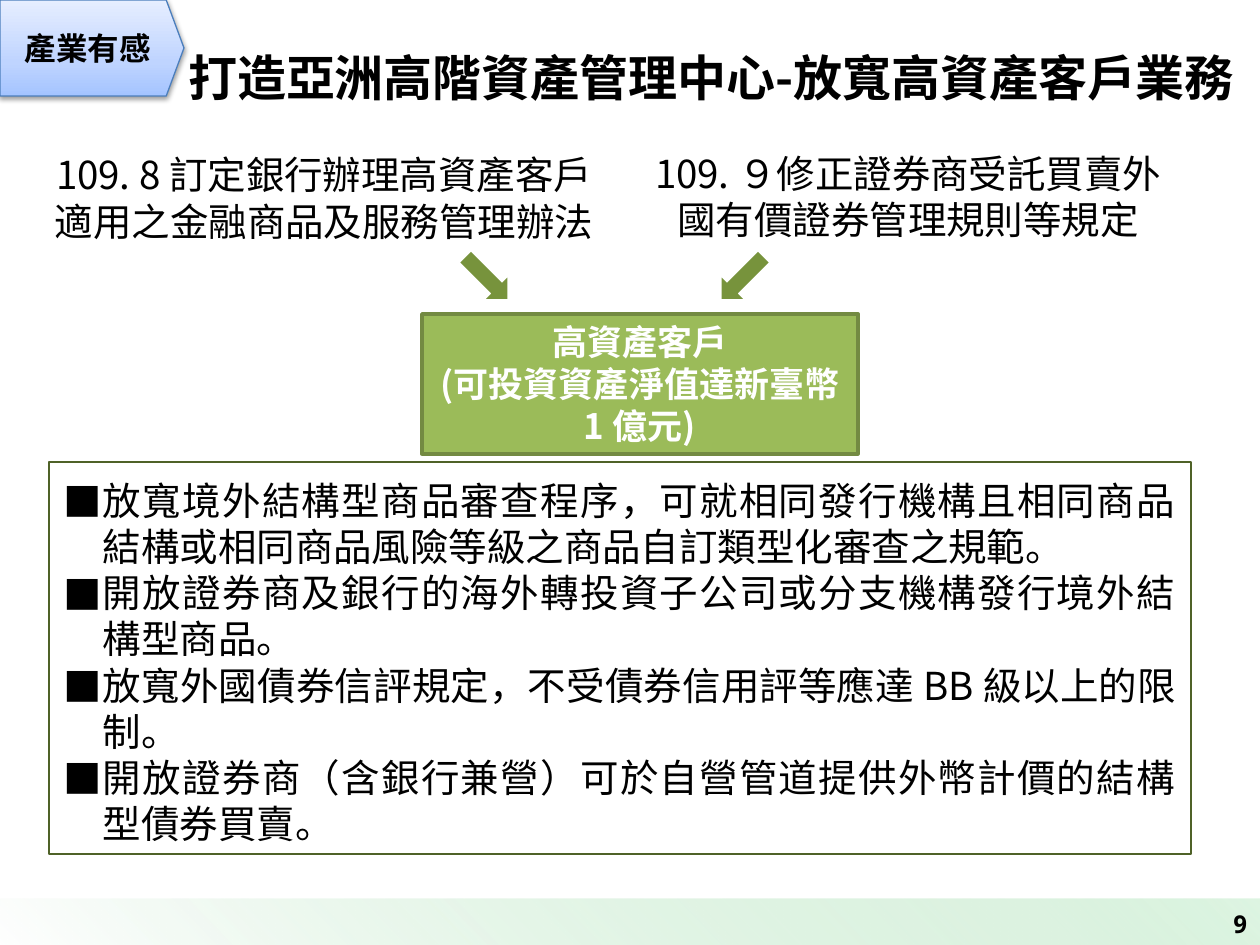
import dataclasses

import lxml.etree
import pptx
import pptx.dml.color
import pptx.enum.shapes
import pptx.enum.text
import pptx.oxml.ns
import pptx.util

SCALE = 914400 / 126
SHAPES = pptx.enum.shapes.MSO_SHAPE
ALIGN = pptx.enum.text.PP_ALIGN
ANCHOR = pptx.enum.text.MSO_ANCHOR


@dataclasses.dataclass(frozen=True)
class Theme:
    """Colours, fonts and type sizes of the deck."""
    sans: str = "Noto Sans CJK SC"
    mono: str = "Noto Sans Mono"
    ink: str = "000000"
    paper: str = "FFFFFF"
    green: str = "9BBB59"
    green_edge: str = "738A42"
    arrow: str = "77933C"
    panel_edge: str = "4F6228"
    tag_edge: str = "4B7EBC"
    tag_stops: tuple = ((0, "A4C4FF", 100), (35, "BFD4FF", 100), (100, "E6EEFF", 100))
    footer_stops: tuple = ((0, "91DEA0", 30), (18, "BDE8C5", 51), (100, "FFFFFF", 100))
    title: int = 28
    body: int = 22
    client: int = 20
    tag: int = 18
    number: int = 14


THEME = Theme()


def px(length):
    """Turn px into EMU."""
    return round(length * SCALE)


def rgb(code):
    """Return a colour from its hex code."""
    return pptx.dml.color.RGBColor.from_string(code)


def add_node(parent, tag, **values):
    """Append a drawing element with the given attributes."""
    node = lxml.etree.SubElement(parent, pptx.oxml.ns.qn(tag))
    for name, value in values.items():
        node.set(name, str(value))
    return node


def add_colour(parent, code, opacity):
    """Append a colour with an opacity in percent."""
    colour = add_node(parent, "a:srgbClr", val=code)
    if opacity < 100:
        add_node(colour, "a:alpha", val=opacity * 1000)


def set_gradient(shape, stops, angle):
    """Fill a shape with a linear gradient."""
    shape.fill.gradient()
    gradient = shape._element.spPr.find(pptx.oxml.ns.qn("a:gradFill"))
    for child in list(gradient):
        gradient.remove(child)
    stop_list = add_node(gradient, "a:gsLst")
    for position, code, opacity in stops:
        add_colour(add_node(stop_list, "a:gs", pos=position * 1000), code, opacity)
    add_node(gradient, "a:lin", ang=angle * 60000, scaled=0)


def add_block(page, box, kind=SHAPES.RECTANGLE, fill=None, edge=None, width=1):
    """Add a shape without shadow, with optional plain fill and outline."""
    shape = page.shapes.add_shape(kind, *map(px, box))
    shape.shadow.inherit = False
    if fill:
        shape.fill.solid()
        shape.fill.fore_color.rgb = rgb(fill)
    if edge:
        shape.line.color.rgb = rgb(edge)
        shape.line.width = pptx.util.Pt(width)
    else:
        shape.line.fill.background()
    return shape


def add_bullet(para, indent):
    """Give a paragraph a square bullet with a hanging indent."""
    settings = para._p.get_or_add_pPr()
    settings.set("marL", str(px(indent)))
    settings.set("indent", str(-px(indent)))
    add_node(settings, "a:buFont", typeface=THEME.sans)
    add_node(settings, "a:buChar", char="■")


def write(shape, lines, size, colour=THEME.ink, bold=False, font=THEME.sans,
          align=ALIGN.CENTER, anchor=ANCHOR.MIDDLE, indent=0, inset=None):
    """Write one paragraph per line into a shape."""
    frame = shape.text_frame
    layout = {"word_wrap": True, "vertical_anchor": anchor}
    if inset:
        for side in ("left", "top", "right", "bottom"):
            layout[f"margin_{side}"] = px(inset)
    for name, value in layout.items():
        setattr(frame, name, value)
    for index, line in enumerate(lines):
        para = frame.paragraphs[0] if index == 0 else frame.add_paragraph()
        para.alignment = align
        if indent:
            add_bullet(para, indent)
        span = para.add_run()
        span.text = line
        for name, value in {"size": pptx.util.Pt(size), "bold": bold, "name": font}.items():
            setattr(span.font, name, value)
        span.font.color.rgb = rgb(colour)
        add_node(span._r.get_or_add_rPr(), "a:ea", typeface=font)


def add_footer(page, box):
    """Draw the footer band with the page number at its right."""
    left, top, width, height = box
    band = add_block(page, (left + 1, top + 1, width, height - 1))
    set_gradient(band, THEME.footer_stops, 135)
    number = page.shapes.add_textbox(*map(px, (left + width - 294, top, 294, height + 2)))
    write(number, ["9"], THEME.number, bold=True, font=THEME.mono, align=ALIGN.RIGHT)


def add_header(page, box):
    """Draw the category tag and the slide title."""
    left, top, width, height = box
    title = page.shapes.add_textbox(*map(px, (left + 173, top + 26, width - 184, height - 26)))
    write(title, ["打造亞洲高階資產管理中心-放寬高資產客戶業務"], THEME.title, bold=True)
    tag = add_block(page, (left, top, 184, 96), SHAPES.PENTAGON, edge=THEME.tag_edge, width=0.75)
    tag.adjustments[0] = 0.185
    set_gradient(tag, THEME.tag_stops, 270)
    effects = tag._element.spPr.find(pptx.oxml.ns.qn("a:effectLst"))
    shadow = add_node(effects, "a:outerShdw", blurRad=pptx.util.Pt(3.1),
                      dist=pptx.util.Pt(1.6), dir=5400000, rotWithShape=0)
    add_colour(shadow, THEME.ink, 38)
    write(tag, ["產業有感"], THEME.tag, bold=True)


def add_client_flow(page, box):
    """Draw the two rules and the arrows leading to the client box."""
    left, top, width, height = box
    rules = (
        ((0, 4, 578, 97), "109. 8 訂定銀行辦理高資產客戶適用之金融商品及服務管理辦法"),
        ((605, 0, 536, 102), "109. ９修正證券商受託買賣外國有價證券管理規則等規定"),
    )
    for (x, y, rule_width, rule_height), text in rules:
        rule = add_block(page, (left + x, top + y, rule_width, rule_height), fill=THEME.paper)
        write(rule, [text], THEME.body)
    for x, angle in ((422, 45), (678, 135)):
        arrow = add_block(page, (left + x, top + 118, 59, 30), SHAPES.RIGHT_ARROW, THEME.arrow)
        arrow.rotation = angle
    client = add_block(page, (left + 387, top + height - 140, 436, 140),
                       fill=THEME.green, edge=THEME.green_edge, width=2)
    write(client, ["高資產客戶", "(可投資資產淨值達新臺幣1 億元)"], THEME.client,
          THEME.paper, bold=True, anchor=ANCHOR.TOP)


def add_measures(page, box):
    """Draw the outlined panel of bulleted measures."""
    panel = add_block(page, box, fill=THEME.paper, edge=THEME.panel_edge, width=1.5)
    write(panel, [
        "放寬境外結構型商品審查程序，可就相同發行機構且相同商品結構或相同商品風險等級之商品自訂類型化審查之規範。",
        "開放證券商及銀行的海外轉投資子公司或分支機構發行境外結構型商品。",
        "放寬外國債券信評規定，不受債券信用評等應達 BB 級以上的限制。",
        "開放證券商（含銀行兼營）可於自營管道提供外幣計價的結構型債券買賣。",
    ], THEME.body, align=ALIGN.JUSTIFY, anchor=ANCHOR.TOP, indent=39, inset=15)


def main():
    """Build the slide and save the deck."""
    deck = pptx.Presentation()
    deck.slide_width, deck.slide_height = px(1260), px(945)
    page = deck.slides.add_slide(deck.slide_layouts[6])
    add_footer(page, (0, 898, 1260, 49))
    add_header(page, (0, 0, 1260, 127))
    add_measures(page, (49, 462, 1142, 392))
    add_client_flow(page, (35, 145, 1141, 309))
    deck.save("out.pptx")


if __name__ == "__main__":
    main()
